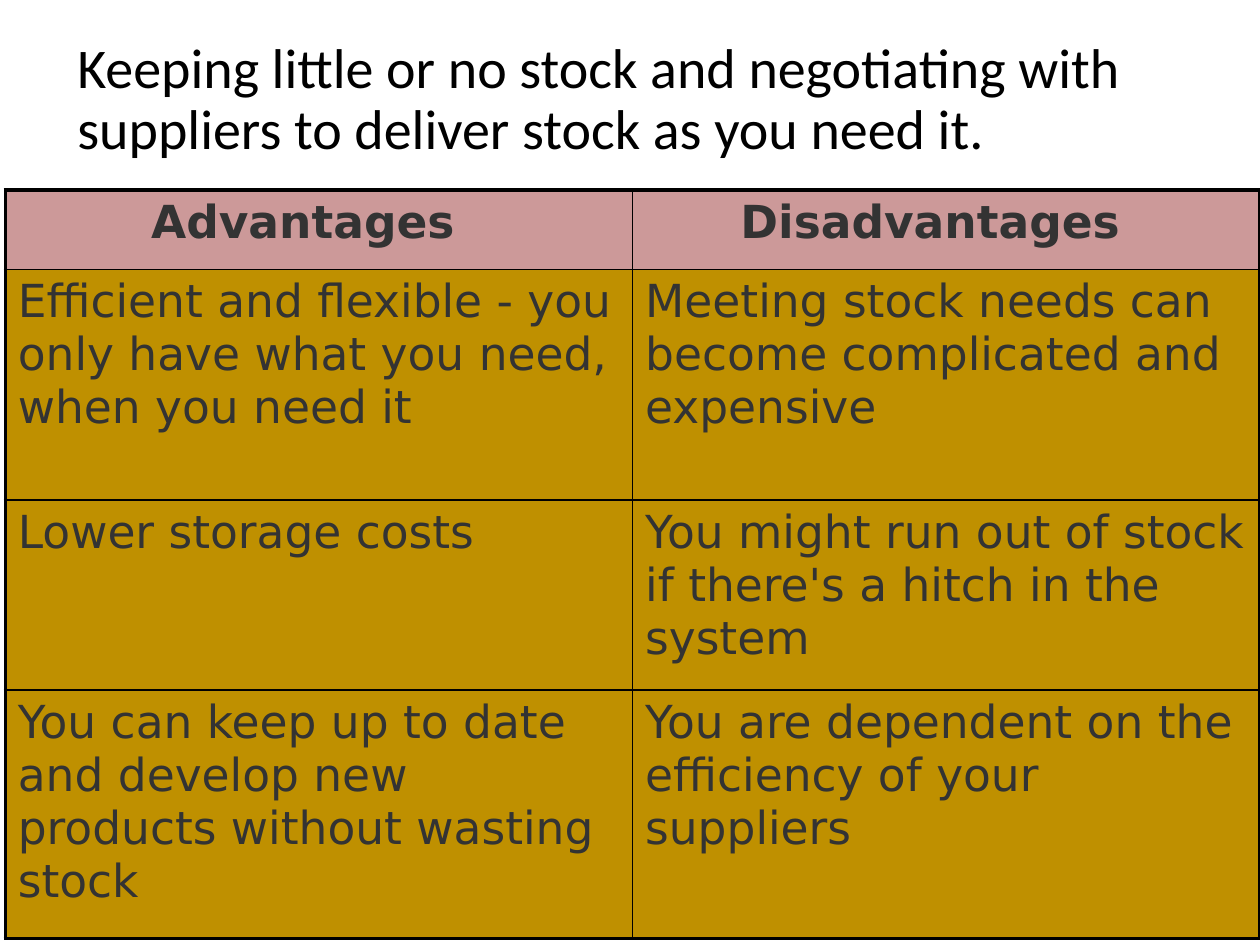
"""Build a slide weighing up the advantages and disadvantages of keeping little stock."""
from lxml import etree
from pptx import Presentation
from pptx.dml.color import RGBColor
from pptx.enum import text
from pptx.oxml import ns
from pptx.util import Pt

BLACK = RGBColor(0x00, 0x00, 0x00)
CHARCOAL = RGBColor(0x33, 0x33, 0x33)
PINK = RGBColor(0xCC, 0x99, 0x99)
GOLD = RGBColor(0xBF, 0x90, 0x00)

THIN, THICK = Pt(1), Pt(2.25)
COLUMN_WIDTH = Pt(358.5)
ROW_HEIGHTS = [Pt(45.4), Pt(131.8), Pt(108.7), Pt(141.8)]
ROWS = [
    ("Advantages  ", "Disadvantages  "),
    ("Efficient and flexible - you only have what you need, when you need it",
     "Meeting stock needs can become complicated and expensive"),
    ("Lower storage costs",
     "You might run out of stock if there's a hitch in the system"),
    ("You can keep up to date and develop new products without wasting stock",
     "You are dependent on the efficiency of your suppliers"),
]


def add_run(paragraph, words, font_name, size, color, bold=False):
    run = paragraph.add_run()
    run.text = words
    run.font.name = font_name
    run.font.size = size
    run.font.bold = bold
    run.font.color.rgb = color


def add_border(cell, side, width):
    properties = cell._tc.get_or_add_tcPr()
    line = etree.SubElement(properties, ns.qn(f"a:ln{side}"), w=str(width))
    fill = etree.SubElement(line, ns.qn("a:solidFill"))
    etree.SubElement(fill, ns.qn("a:srgbClr"), val=str(BLACK))


presentation = Presentation()
presentation.slide_width, presentation.slide_height = Pt(720), Pt(540)
slide = presentation.slides.add_slide(presentation.slide_layouts[5])

title = slide.shapes.title
title.left, title.top, title.width, title.height = Pt(37), Pt(15), Pt(648), Pt(85)
title.text_frame.vertical_anchor = text.MSO_ANCHOR.MIDDLE
paragraph = title.text_frame.paragraphs[0]
paragraph.alignment = text.PP_ALIGN.LEFT
paragraph.line_spacing = 0.9
add_run(paragraph,
        "Keeping little or no stock and negotiating with suppliers to deliver stock as you need it.",
        "Calibri", Pt(32), BLACK)

last_row, last_column = len(ROWS) - 1, len(ROWS[0]) - 1
table = slide.shapes.add_table(
    len(ROWS), len(ROWS[0]), Pt(3), Pt(108.5),
    COLUMN_WIDTH * len(ROWS[0]), sum(ROW_HEIGHTS)).table
for column in table.columns:
    column.width = COLUMN_WIDTH

for row_index, (height, row_words) in enumerate(zip(ROW_HEIGHTS, ROWS)):
    table.rows[row_index].height = height
    is_header = row_index == 0
    for column_index, words in enumerate(row_words):
        cell = table.cell(row_index, column_index)
        outer_edges = {
            "L": column_index == 0,
            "R": column_index == last_column,
            "T": is_header,
            "B": row_index == last_row,
        }
        for side, is_outer in outer_edges.items():
            add_border(cell, side, THICK if is_outer else THIN)
        cell.fill.solid()
        cell.fill.fore_color.rgb = PINK if is_header else GOLD
        paragraph = cell.text_frame.paragraphs[0]
        paragraph.alignment = text.PP_ALIGN.CENTER if is_header else text.PP_ALIGN.LEFT
        add_run(paragraph, words, "DejaVu Sans", Pt(26), CHARCOAL, is_header)

presentation.save("out.pptx")
